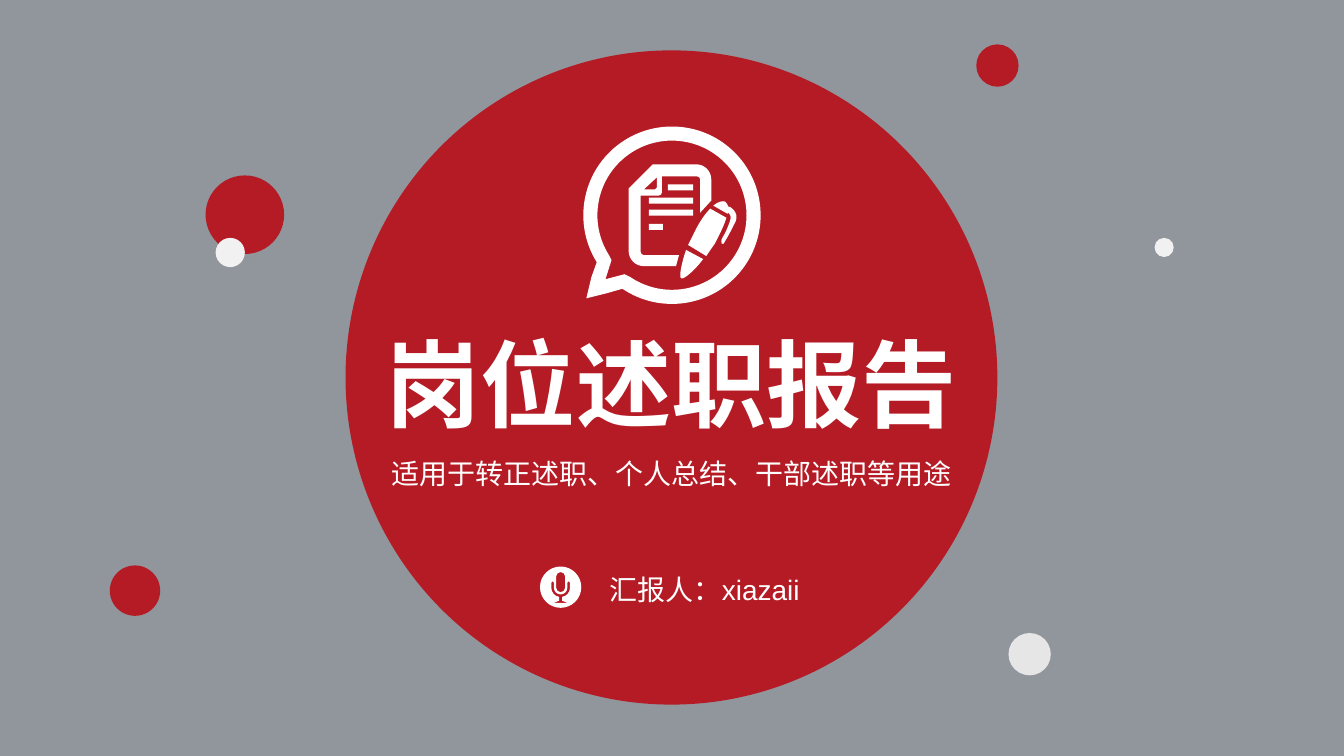
import math

from lxml import etree
from pptx import Presentation
from pptx import util as u
from pptx.dml.color import RGBColor
from pptx.enum import shapes, text
from pptx.oxml.ns import qn

GREY = RGBColor(0x91, 0x95, 0x9C)
RED = RGBColor(0xB5, 0x1B, 0x25)
WHITE = RGBColor(0xFF, 0xFF, 0xFF)
PALE = RGBColor(0xF1, 0xF1, 0xF1)
SILVER = RGBColor(0xE6, 0xE6, 0xE6)

# Left, top, diameter, colour
DOTS = [
    (2.04, 1.74, 0.78, RED),
    (9.69, 0.44, 0.42, RED),
    (10.01, 6.28, 0.42, SILVER),
    (2.14, 2.36, 0.29, PALE),
    (1.09, 5.61, 0.5, RED),
    (11.46, 2.36, 0.19, PALE),
]


def paint(shape, color):
    shape.shadow.inherit = False
    shape.fill.solid()
    shape.fill.fore_color.rgb = color
    shape.line.fill.background()


def add_disc(slide, left, top, width, height, color):
    box = [u.Inches(length) for length in (left, top, width, height)]
    paint(slide.shapes.add_shape(shapes.MSO_SHAPE.OVAL, *box), color)


def add_text(slide, box, content, size=20, font="Arial", bold=False, color=WHITE):
    frame = slide.shapes.add_textbox(*[u.Inches(length) for length in box]).text_frame
    frame.word_wrap = True
    frame.vertical_anchor = text.MSO_ANCHOR.MIDDLE
    frame.margin_left = frame.margin_right = frame.margin_top = frame.margin_bottom = 0
    paragraph = frame.paragraphs[0]
    paragraph.alignment = text.PP_ALIGN.CENTER
    run = paragraph.add_run()
    run.text = content
    run.font.size = u.Pt(size)
    run.font.name = font
    run.font.bold = bold
    run.font.color.rgb = color
    etree.SubElement(run.font._element, qn("a:ea"), typeface=font)


def arc(x, y, radius, start=0, end=360):
    """A start point, then Bezier curves along a circle (degrees, clockwise)."""
    count = math.ceil(abs(end - start) / 90)
    step = math.radians(end - start) / count
    reach = 4 / 3 * math.tan(step / 4)
    points = []
    for i in range(count + 1):
        angle = math.radians(start) + step * i
        cos, sin = radius * math.cos(angle), radius * math.sin(angle)
        point = (x + cos, y + sin)
        if points:
            arriving = (x + cos + reach * sin, y + sin - reach * cos)
            points.append(leaving + arriving + point)
        else:
            points.append(point)
        leaving = (x + cos - reach * sin, y + sin + reach * cos)
    return points


def bar(left, top, right, bottom):
    return [(left, top), (right, top), (right, bottom), (left, bottom)]


def add_icon(slide, left, top, size, contours, color):
    """Draw contours of points and curves in a square box as one shape with holes."""
    corners = [(u.Inches(left + x), u.Inches(top + y)) for x, y in bar(0, 0, size, size)]
    builder = slide.shapes.build_freeform(*corners[0], scale=1.0)
    builder.add_line_segments(corners[1:], close=True)
    shape = builder.convert_to_shape()
    outline = shape._element.find(".//" + qn("a:pathLst"))[0]
    for child in list(outline):
        outline.remove(child)
    for contour in contours:
        for index, lengths in enumerate(contour):
            kind = "a:cubicBezTo" if len(lengths) == 6 else "a:lnTo" if index else "a:moveTo"
            segment = etree.SubElement(outline, qn(kind))
            for x, y in zip(lengths[::2], lengths[1::2]):
                etree.SubElement(segment, qn("a:pt"), x=str(u.Inches(x)), y=str(u.Inches(y)))
        etree.SubElement(outline, qn("a:close"))
    paint(shape, color)


def add_report_icon(slide, left, top):
    centre = (0.96, 0.965)
    bubble = [
        arc(*centre, 0.88, 148, 484) + [(0.31, 1.74), (0.11, 1.79), (0.16, 1.58)],
        arc(*centre, 0.74, 148, 484) + [(0.49, 1.55), (0.3, 1.6), (0.36, 1.41)],
    ]
    page = [
        [(0.77, 0.46)] + arc(1.2, 0.61, 0.15, 270, 360)
        + [(1.35, 0.82), (1.24, 0.94)] + arc(1.21, 0.61, 0.03, 0, -90)
        + [(0.86, 0.58)] + arc(0.83, 0.74, 0.03, 0, 90)
        + [(0.65, 0.77)] + arc(0.68, 1.33, 0.03, 180, 90)
        + [(1.03, 1.36), (1.0, 1.47)] + arc(0.68, 1.32, 0.15, 90, 180) + [(0.53, 0.7)],
        [(0.68, 0.71), (0.79, 0.71), (0.81, 0.69), (0.81, 0.59)],
    ]
    lines = [bar(x, y, right, y + 0.06) for x, y, right in
             [(0.92, 0.66, 1.17), (0.73, 0.79, 1.17), (0.73, 0.91, 1.17), (0.73, 1.05, 0.87)]]
    pen = [
        # Cap and clip
        [(1.49, 0.83), (1.5, 0.84, 1.51, 0.86, 1.52, 0.88),
         (1.54, 0.88, 1.57, 0.9, 1.59, 0.94), (1.61, 0.97, 1.6, 1.02, 1.58, 1.05),
         (1.55, 1.11, 1.51, 1.19, 1.47, 1.25), (1.44, 1.26, 1.45, 1.2, 1.46, 1.19),
         (1.49, 1.14, 1.51, 1.1, 1.54, 1.01), (1.55, 0.97, 1.53, 0.95, 1.52, 0.94),
         (1.51, 0.95), (1.37, 0.87), (1.42, 0.83, 1.46, 0.82, 1.49, 0.83)],
        # Barrel
        [(1.5, 0.99), (1.48, 1.06, 1.44, 1.14, 1.39, 1.24), (1.3, 1.37), (1.12, 1.26),
         (1.19, 1.12), (1.24, 1.02, 1.29, 0.95, 1.34, 0.9)],
        # Nib
        [(1.27, 1.4), (1.18, 1.52, 1.07, 1.61, 1.05, 1.59),
         (1.03, 1.58, 1.05, 1.45, 1.1, 1.31)],
    ]
    add_icon(slide, left, top, 1.92, bubble + page + lines + pen, WHITE)


def add_microphone(slide, left, top):
    x = 0.205
    disc = arc(x, 0.205, 0.205)
    capsule = arc(x, 0.1, 0.045, 180, 360) + arc(x, 0.21, 0.045, 0, 180)
    stand = (arc(x + 0.08, 0.16, 0.013, 180, 360) + arc(x, 0.21, 0.093, 0, 80)
             + [(x + 0.015, 0.34), (x + 0.07, 0.36), (x - 0.07, 0.36), (x - 0.015, 0.34)]
             + arc(x, 0.21, 0.093, 100, 180) + arc(x - 0.08, 0.16, 0.013, 180, 360)
             + arc(x, 0.21, 0.067, 180, 0))
    add_icon(slide, left, top, 0.41, [disc, capsule, stand], WHITE)


def add_background(slide):
    slide.background.fill.solid()
    slide.background.fill.fore_color.rgb = GREY
    for left, top, diameter, color in DOTS:
        add_disc(slide, left, top, diameter, diameter, color)


def add_cover(slide, left, top, width, height):
    add_disc(slide, left, top, width, height, RED)
    add_report_icon(slide, left + 2.28, top + 0.67)
    # Title and subtitle
    add_text(slide, (left + 0.22, top + 2.7, 6.03, 1.19), "岗位述职报告",
             size=68, font="Noto Sans CJK SC", bold=True)
    add_text(slide, (left + 0.32, top + 3.99, 5.83, 0.41),
             "适用于转正述职、个人总结、干部述职等用途")
    # Presenter
    add_text(slide, (left + 2.06, top + 5.16, 3.01, 0.38), "汇报人：xiazaii")
    add_microphone(slide, left + 1.93, top + 5.12)


def main():
    presentation = Presentation()
    presentation.slide_width = u.Inches(13.34)
    presentation.slide_height = u.Inches(7.5)
    slide = presentation.slides.add_slide(presentation.slide_layouts[6])
    add_background(slide)
    add_cover(slide, 3.43, 0.5, 6.47, 6.49)
    presentation.save("out.pptx")


if __name__ == "__main__":
    main()
